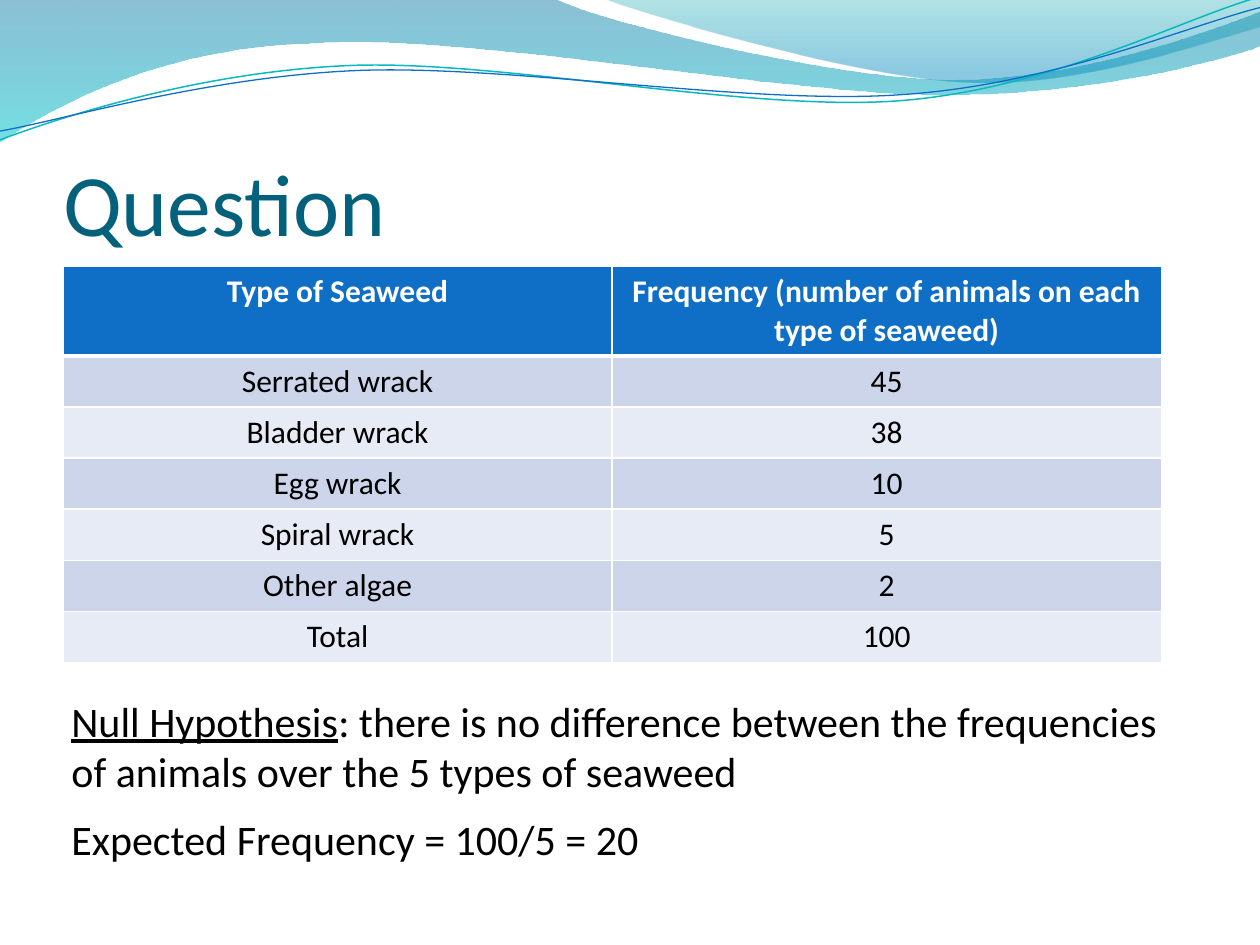
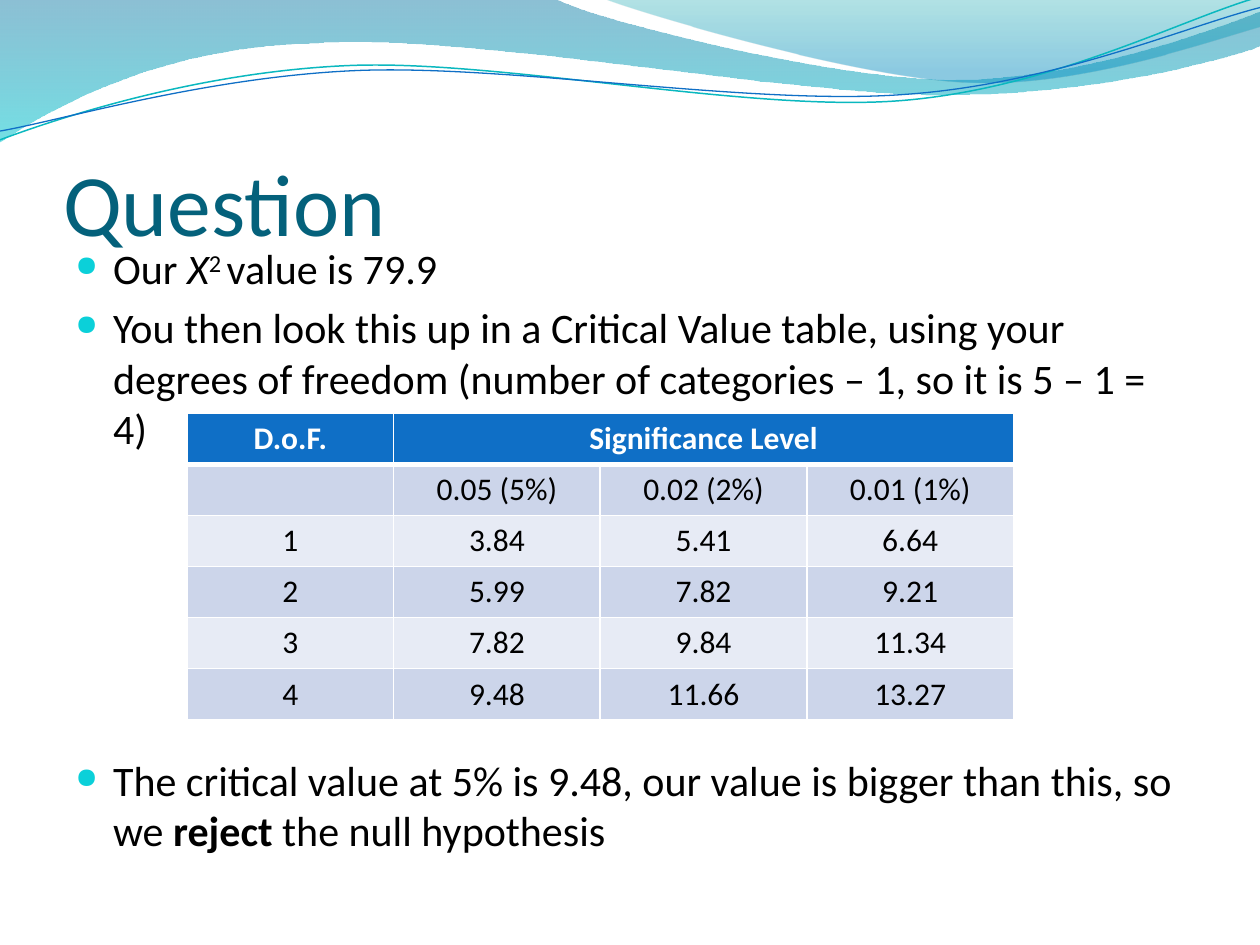
"""Build two slides on testing seaweed counts against a null hypothesis."""
import dataclasses
import math

import lxml.etree
import pptx
import pptx.dml.color
import pptx.enum.text
import pptx.oxml.ns
import pptx.util

Cm = pptx.util.Cm
Pt = pptx.util.Pt
qn = pptx.oxml.ns.qn
rgb = pptx.dml.color.RGBColor.from_string
Anchor = pptx.enum.text.MSO_ANCHOR
Align = pptx.enum.text.PP_ALIGN
AutoSize = pptx.enum.text.MSO_AUTO_SIZE


@dataclasses.dataclass(frozen=True)
class Theme:
    """Colours, font and type sizes of the deck."""

    font: str = "Calibri"
    title: str = "04617B"
    text: str = "000000"
    white: str = "FFFFFF"
    header: str = "0F6FC6"
    odd_row: str = "CCD5EA"
    even_row: str = "E7EBF5"
    bullet: str = "0BD0D9"
    teal_line: str = "0AB8BF"
    title_size: int = 50
    body_size: int = 24
    table_size: int = 18


THEME = Theme()
GRID_WIDTH = 10
LINE_TILT = -2.7
LINE_PIVOT = (4.99, 0.58)
FIRST_WAVE_ID = 101
BAND_BOX = (Cm(0), Cm(0), Cm(25.4), Cm(2.87))
TITLE_BOX = (Cm(1.27), Cm(1.95), Cm(22.86), Cm(3.18))

WAVES = [
    {"start": (0, 0),
     "segments": [(4.4, -0.01), (4.76, 0.17, 6.64, 0.63, 7.58, 0.63),
                  (8.53, 0.63, 9.58, 0.26, 10, 0.09), (10.01, 0.36),
                  (9.83, 0.44, 8.7, 0.76, 7.46, 0.75),
                  (6.22, 0.75, 3.82, 0.28, 2.57, 0.34),
                  (1.29, 0.36, 0.46, 0.83, -0.01, 1.13)],
     "stops": [(0, "0074A1", 45), (1, "00C6CF", 55)]},
    {"start": (4.79, -0.01),
     "segments": [(5.09, 0.11, 6.82, 0.62, 7.69, 0.65),
                  (8.56, 0.69, 9.61, 0.32, 10, 0.21), (10, 0)],
     "stops": [(0, "00A1A9", 30), (0.8, "008BBF", 45)]},
    {"start": (0, 1.11),
     "segments": [(0.48, 0.93, 1.58, 0.57, 2.77, 0.52),
                  (3.95, 0.47, 5.93, 0.89, 7.13, 0.8),
                  (8.33, 0.71, 9.38, 0.15, 9.98, -0.02)],
     "line": (THEME.teal_line, 0.85)},
    {"start": (0, 1.04),
     "segments": [(0.47, 0.96, 1.64, 0.61, 2.83, 0.56),
                  (4.03, 0.51, 5.97, 0.84, 7.17, 0.75),
                  (8.36, 0.67, 9.41, 0.21, 10, 0.06)],
     "line": (THEME.header, 0.75)},
]

SEAWEED_COUNTS = [
    ("Type of Seaweed", "Frequency (number of animals on each type of seaweed)"),
    ("Serrated wrack", "45"),
    ("Bladder wrack", "38"),
    ("Egg wrack", "10"),
    ("Spiral wrack", "5"),
    ("Other algae", "2"),
    ("Total", "100"),
]
CRITICAL_VALUES = [
    ("D.o.F.", "Significance Level", "", ""),
    ("", "0.05 (5%)", "0.02 (2%)", "0.01 (1%)"),
    ("1", "3.84", "5.41", "6.64"),
    ("2", "5.99", "7.82", "9.21"),
    ("3", "7.82", "9.84", "11.34"),
    ("4", "9.48", "11.66", "13.27"),
]
NULL_HYPOTHESIS = [
    ("Null Hypothesis", {"underline": True}),
    (": there is no difference between the frequencies of animals over the 5 types of seaweed", {}),
]
EXPECTED_FREQUENCY = [("Expected Frequency = 100/5 = 20", {})]
CONCLUSIONS = [
    (0, [("Our ", {}), ("X", {"italic": True}), ("2 ", {"baseline": 30000}),
         ("value is 79.9", {})]),
    (5, [("You then look this up in a Critical Value table, using your degrees of "
          "freedom (number of categories – 1, so it is 5 – 1 = 4)", {})]),
    (172, [("The critical value at 5% is 9.48, our value is bigger than this, so we ", {}),
           ("reject ", {"bold": True}), ("the null hypothesis", {})]),
]


def set_values(target, values):
    """Set each named attribute of the target."""
    for name, value in values.items():
        setattr(target, name, value)


def add_xml(parent, tag, **attributes):
    """Append a child element with the given attributes."""
    return lxml.etree.SubElement(parent, qn(tag), attributes)


def write_run(paragraph, text, size, color, **values):
    """Add one run of text in the deck font."""
    run = paragraph.add_run()
    run.text = text
    set_values(run.font, {"name": THEME.font, "size": Pt(size), **values})
    run.font.color.rgb = rgb(color)


def write_body(paragraph, paragraph_xml, runs):
    """Write body runs, raising those that have a baseline."""
    for text, style in runs:
        values = dict(style)
        baseline = values.pop("baseline", 0)
        write_run(paragraph, text, THEME.body_size, THEME.text, **values)
        if baseline:
            paragraph_xml.findall(qn("a:r"))[-1].get_or_add_rPr().set("baseline", str(baseline))


def turn(point, degrees):
    """Turn a grid point clockwise about the pivot of the wave lines."""
    angle = math.radians(degrees)
    dx, dy = (value - center for value, center in zip(point, LINE_PIVOT))
    return (LINE_PIVOT[0] + dx * math.cos(angle) - dy * math.sin(angle),
            LINE_PIVOT[1] + dx * math.sin(angle) + dy * math.cos(angle))


def bend(wave, segments):
    """Join each three control points of a wave into one cubic curve."""
    steps = wave.element.iter(qn("a:lnTo"))
    steps = iter(list(steps))
    for segment in segments:
        corners = [next(steps) for _ in range(len(segment) // 2)]
        if len(corners) == 3:
            curve = corners[0].makeelement(qn("a:cubicBezTo"))
            corners[0].addprevious(curve)
            for corner in corners:
                curve.append(corner[0])
                corner.getparent().remove(corner)


def paint_gradient(wave, stops):
    """Fill a wave from top to bottom with translucent colours."""
    wave.fill.gradient()
    wave.fill.gradient_angle = 270
    for stop, (position, color, _) in zip(wave.fill.gradient_stops, stops):
        stop.position = position
        stop.color.rgb = rgb(color)
    for stop_xml, (_, _, opacity) in zip(wave.element.iter(qn("a:gs")), stops):
        add_xml(stop_xml[0], "a:alpha", val=str(opacity * 1000))
    wave.line.fill.background()


def add_wave(slide, wave_format, box):
    """Draw one wave of the band and return it."""
    left, top, width, _ = box
    unit = width / GRID_WIDTH
    filled = "stops" in wave_format
    segments = wave_format["segments"]
    points = [wave_format["start"]]
    points += [segment[i:i + 2] for segment in segments for i in range(0, len(segment), 2)]
    if not filled:
        points = [turn(point, -LINE_TILT) for point in points]
    points = [(x * unit, y * unit) for x, y in points]
    outline = slide.shapes.build_freeform(*points[0])
    outline.add_line_segments(points[1:], close=filled)
    wave = outline.convert_to_shape(left, top)
    wave.shadow.inherit = False
    bend(wave, segments)
    if filled:
        paint_gradient(wave, wave_format["stops"])
    else:
        color, weight = wave_format["line"]
        wave.rotation = LINE_TILT
        wave.fill.background()
        wave.line.color.rgb = rgb(color)
        wave.line.width = Pt(weight)
    return wave


def add_wave_band(slide, box):
    """Draw the waves and hand them to the slide layout, behind its placeholders."""
    layout_tree = slide.slide_layout.shapes.element
    for index, wave_format in enumerate(WAVES):
        wave = add_wave(slide, wave_format, box)
        next(wave.element.iter(qn("p:cNvPr"))).set("id", str(FIRST_WAVE_ID + index))
        layout_tree.insert(2 + index, wave.element)


def place(shape, box):
    """Move and size a shape to its box."""
    set_values(shape, dict(zip(("left", "top", "width", "height"), box)))


def add_heading(slide, text, box):
    """Fill and format the title placeholder."""
    heading = slide.shapes.title
    place(heading, box)
    set_values(heading.text_frame, {
        "margin_left": 0, "margin_right": 0, "margin_top": Cm(0.13), "margin_bottom": 0,
        "vertical_anchor": Anchor.BOTTOM, "word_wrap": True, "auto_size": AutoSize.NONE})
    paragraph = heading.text_frame.paragraphs[0]
    paragraph.alignment = Align.LEFT
    write_run(paragraph, text, THEME.title_size, THEME.title)


def add_statement(slide, runs, box):
    """Add one wrapped statement that fits its text."""
    statement = slide.shapes.add_textbox(*box)
    set_values(statement.text_frame, {"word_wrap": True,
                                      "auto_size": AutoSize.SHAPE_TO_FIT_TEXT})
    write_body(statement.text_frame.paragraphs[0],
               next(statement.element.iter(qn("a:p"))), runs)


def add_bullets(slide, items, box):
    """Add bulleted paragraphs, each with its own space before."""
    bullets = slide.shapes.add_textbox(*box)
    frame = bullets.text_frame
    frame.word_wrap = True
    for _ in items[1:]:
        frame.add_paragraph()
    paragraphs_xml = bullets.element.iter(qn("a:p"))
    for (gap, runs), paragraph, paragraph_xml in zip(items, frame.paragraphs, paragraphs_xml):
        paragraph.space_before = Pt(gap)
        properties = paragraph_xml.get_or_add_pPr()
        properties.set("marL", str(Cm(0.76)))
        properties.set("indent", str(-Cm(0.76)))
        add_xml(add_xml(properties, "a:buClr"), "a:srgbClr", val=THEME.bullet)
        add_xml(properties, "a:buSzPct", val="68000")
        add_xml(properties, "a:buChar", char="●")
        write_body(paragraph, paragraph_xml, runs)


def add_borders(cell_xml, row):
    """Give a cell white borders, heavier under the header row."""
    properties = cell_xml.get_or_add_tcPr()
    heavy_side = {0: "B", 1: "T"}.get(row)
    for index, side in enumerate("LRTB"):
        width = Pt(3 if side == heavy_side else 1)
        border = add_xml(properties, f"a:ln{side}", w=str(width))
        add_xml(add_xml(border, "a:solidFill"), "a:srgbClr", val=THEME.white)
        properties.insert(index, border)


def add_data_table(slide, rows, box, header_height, merge_header=False):
    """Add a banded table with equal columns and equal body rows."""
    _, _, width, height = box
    columns = len(rows[0])
    frame = slide.shapes.add_table(len(rows), columns, *box)
    table = frame.table
    for column in table.columns:
        column.width = width // columns
    for row in table.rows:
        row.height = (height - header_height) // (len(rows) - 1)
    table.rows[0].height = header_height
    for index, cell_xml in enumerate(frame.element.iter(qn("a:tc"))):
        row, column = divmod(index, columns)
        cell = table.cell(row, column)
        band = THEME.odd_row if row % 2 else THEME.even_row
        cell.fill.solid()
        cell.fill.fore_color.rgb = rgb(band if row else THEME.header)
        add_borders(cell_xml, row)
        if rows[row][column]:
            paragraph = cell.text_frame.paragraphs[0]
            paragraph.alignment = Align.CENTER
            write_run(paragraph, rows[row][column], THEME.table_size,
                      THEME.text if row else THEME.white, bold=row == 0)
    if merge_header:
        table.cell(0, 1).merge(table.cell(0, columns - 1))


def add_question_slide(deck):
    """Add a title-only slide with its heading."""
    slide = deck.slides.add_slide(deck.slide_layouts[5])
    add_heading(slide, "Question", TITLE_BOX)
    return slide


def build_hypothesis_slide(deck):
    """Show the seaweed counts and the null hypothesis."""
    slide = add_question_slide(deck)
    add_wave_band(slide, BAND_BOX)
    add_data_table(slide, SEAWEED_COUNTS, (Cm(1.27), Cm(5.37), Cm(22.14), Cm(7.92)), Cm(1.78))
    add_statement(slide, NULL_HYPOTHESIS, (Cm(1.19), Cm(13.89), Cm(22.81), Cm(2.31)))
    add_statement(slide, EXPECTED_FREQUENCY, (Cm(1.19), Cm(16.28), Cm(22.43), Cm(1.27)))


def build_conclusion_slide(deck):
    """Show the critical values and the conclusion."""
    slide = add_question_slide(deck)
    add_bullets(slide, CONCLUSIONS, (Cm(1.27), Cm(4.77), Cm(22.86), Cm(13.49)))
    add_data_table(slide, CRITICAL_VALUES, (Cm(3.77), Cm(8.33), Cm(16.66), Cm(6.18)),
                   Cm(1.03), merge_header=True)


def main():
    """Build and save the deck."""
    deck = pptx.Presentation()
    set_values(deck, {"slide_width": Cm(25.4), "slide_height": Cm(19.05)})
    build_hypothesis_slide(deck)
    build_conclusion_slide(deck)
    deck.save("out.pptx")


if __name__ == "__main__":
    main()
